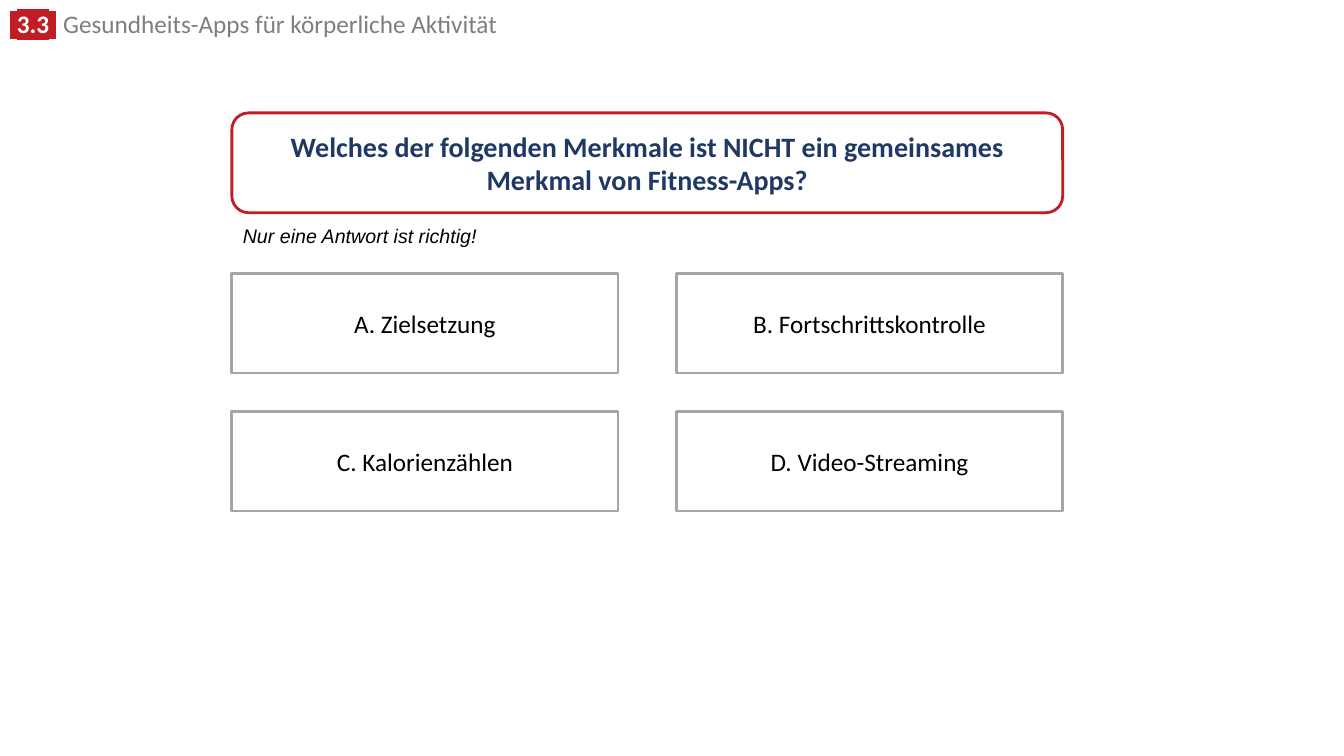
from lxml.etree import SubElement
from pptx import Presentation
from pptx.dml.color import RGBColor
from pptx.enum.shapes import MSO_SHAPE
from pptx.enum.text import MSO_ANCHOR, MSO_AUTO_SIZE, PP_ALIGN
from pptx.oxml.ns import qn
from pptx.util import Inches, Pt

RED = RGBColor(0xC0, 0x1E, 0x24)
NAVY = RGBColor(0x20, 0x38, 0x64)
GRAY = RGBColor(0x7F, 0x7F, 0x7F)
BORDER = RGBColor(0xA5, 0xA5, 0xA5)
BLACK = RGBColor(0, 0, 0)
WHITE = RGBColor(0xFF, 0xFF, 0xFF)

ANSWERS = ["A. Zielsetzung", "B. Fortschrittskontrolle",
           "C. Kalorienzählen", "D. Video-Streaming"]
BOX_HEIGHT = 0.99


def highlight(run, color):
    """Put a marker colour behind a run that already has a text colour."""
    properties = run.font._element
    marker = SubElement(properties, qn("a:highlight"))
    SubElement(marker, qn("a:srgbClr")).set("val", str(color))
    properties.find(qn("a:solidFill")).addnext(marker)


def add_header(slide, left, top, width, height, number, title):
    header = slide.shapes.add_textbox(
        Inches(left), Inches(top), Inches(width), Inches(height))
    header.text_frame.word_wrap = True
    header.text_frame.auto_size = MSO_AUTO_SIZE.SHAPE_TO_FIT_TEXT
    paragraph = header.text_frame.paragraphs[0]
    paragraph.line_spacing = 0.8
    paragraph.font.size = Pt(18)
    for text, font_name, is_number in [
            (" ", "Arial", True), (number, "Calibri", True), (" ", "Arial", True),
            (" ", "Arial", False), (title, "Calibri", False)]:
        run = paragraph.add_run()
        run.text = text
        run.font.name = font_name
        run.font.bold = is_number
        run.font.color.rgb = WHITE if is_number else GRAY
        if is_number:
            highlight(run, RED)


def add_box(slide, left, top, width, text, outline, color, size,
            preset=MSO_SHAPE.RECTANGLE, bold=False):
    box = slide.shapes.add_shape(
        preset, Inches(left), Inches(top), Inches(width), Inches(BOX_HEIGHT))
    box.shadow.inherit = False
    box.fill.solid()
    box.fill.fore_color.rgb = WHITE
    box.line.color.rgb = outline
    box.line.width = Pt(2)
    box.text_frame.word_wrap = True
    box.text_frame.vertical_anchor = MSO_ANCHOR.MIDDLE
    paragraph = box.text_frame.paragraphs[0]
    paragraph.text = text
    paragraph.alignment = PP_ALIGN.CENTER
    paragraph.font.name = "Calibri"
    paragraph.font.size = Pt(size)
    paragraph.font.bold = bold
    paragraph.font.color.rgb = color


def add_hint(slide, left, top, width, height, text):
    hint = slide.shapes.add_textbox(
        Inches(left), Inches(top), Inches(width), Inches(height))
    hint.text_frame.word_wrap = False
    hint.text_frame.auto_size = MSO_AUTO_SIZE.SHAPE_TO_FIT_TEXT
    paragraph = hint.text_frame.paragraphs[0]
    paragraph.text = text
    paragraph.font.name = "Arial"
    paragraph.font.size = Pt(14)
    paragraph.font.italic = True
    paragraph.font.color.rgb = BLACK


def add_answers(slide, left, top, width, answers):
    """Lay the answers out in two columns, row by row."""
    column_gap, row_gap = 0.58, 0.38
    answer_width = (width - column_gap) / 2
    for index, answer in enumerate(answers):
        row, column = divmod(index, 2)
        add_box(slide, left + column * (answer_width + column_gap),
                top + row * (BOX_HEIGHT + row_gap), answer_width,
                answer, BORDER, BLACK, 18)


def add_quiz(slide, left, top, width, question, hint, answers):
    add_box(slide, left, top, width, question, RED, NAVY, 20,
            MSO_SHAPE.ROUNDED_RECTANGLE, bold=True)
    add_answers(slide, left, top + 1.59, width, answers)
    add_hint(slide, left + 0.01, top + 1.05, 2.57, 0.34, hint)


def main():
    presentation = Presentation()
    presentation.slide_width = Inches(13.33)
    presentation.slide_height = Inches(7.5)
    slide = presentation.slides.add_slide(presentation.slide_layouts[6])
    add_header(slide, 0, 0.09, 9.52, 0.35,
               "3.3", "Gesundheits-Apps für körperliche Aktivität")
    add_quiz(slide, 2.3, 1.12, 8.24,
             "Welches der folgenden Merkmale ist NICHT ein gemeinsames "
             "Merkmal von Fitness-Apps?",
             "Nur eine Antwort ist richtig!", ANSWERS)
    presentation.save("out.pptx")


if __name__ == "__main__":
    main()
